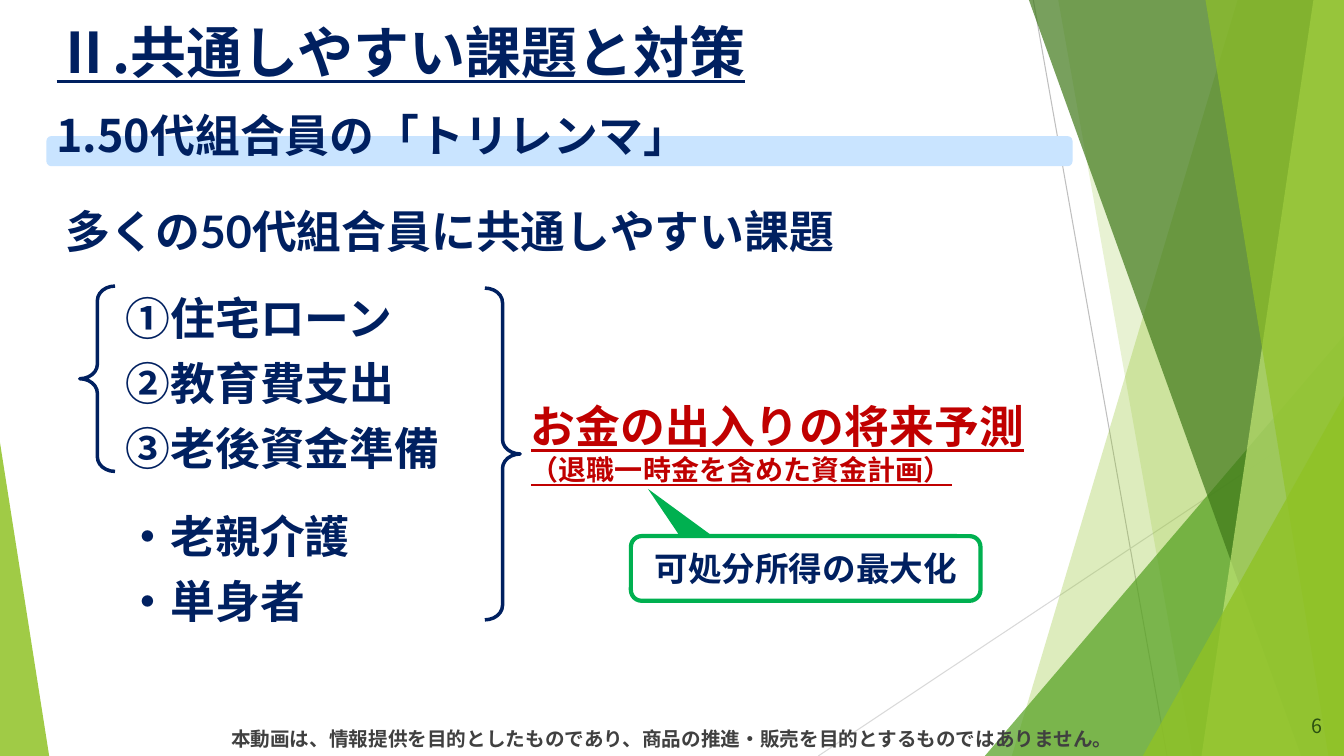
from dataclasses import dataclass
from typing import Union

from lxml.etree import SubElement
from pptx import Presentation
from pptx.dml.color import RGBColor
from pptx.enum.shapes import MSO_CONNECTOR, MSO_SHAPE
from pptx.enum.text import MSO_ANCHOR, MSO_AUTO_SIZE, PP_ALIGN
from pptx.oxml.ns import qn
from pptx.util import Cm, Pt

COLORS = {
    "navy": "002060", "red": "C00000", "green": "00B050", "white": "FFFFFF",
    "sky": "C9E4FF", "grey": "404040", "number": "2A5010", "line": "BFBFBF",
    "pale_line": "D9D9D9", "lime": "90C226", "leaf": "54A021",
    "forest": "3F7819", "light_lime": "C0E474",
}
WIDTH, HEIGHT = 33.87, 19.05
JAPANESE = "Noto Sans CJK JP"


@dataclass
class Band:
    """Decoration reaching from a slanted left edge to the right page edge."""
    top_x: float
    bottom_x: float
    color: str
    opacity: int


@dataclass
class Corner:
    """Right-angled triangle standing on the bottom page edge."""
    left: float
    top: float
    width: float
    adjust: float
    color: str
    opacity: int


@dataclass
class Style:
    size: int
    color: str = "navy"
    font: str = JAPANESE
    bold: bool = True
    underline: bool = False
    align: PP_ALIGN = PP_ALIGN.LEFT


@dataclass
class Label:
    lines: list[str]
    left: float
    top: float
    width: float
    height: float
    styles: list[Style]
    anchor: MSO_ANCHOR = MSO_ANCHOR.TOP
    fit: bool = True


DECORATION: list[Union[Band, Corner]] = [
    Band(31.19, 25.5, "lime", 30),
    Band(26.67, 30.05, "lime", 20),
    Corner(24.82, 8.46, 9.05, 1, "leaf", 72),
    Band(25.93, 32.79, "forest", 70),
    Band(33.1, 30.28, "light_lime", 70),
    Band(30.38, 33.48, "lime", 65),
    Corner(28.8, 9.98, 5.07, 1, "lime", 80),
    Corner(0, 11.15, 1.24, 0, "lime", 85),
]
LEAD = Style(32, font="Lato")
ITEM_STEP = 1.63
ITEM_GROUPS = [
    (7.21, ["①住宅ローン", "②教育費支出", "③老後資金準備"]),
    (12.7, ["・老親介護", "・単身者"]),
]
FOOTER = Label(
    ["本動画は、情報提供を目的としたものであり、商品の推進・販売を目的とするものではありません。"],
    4.14, 18.19, 25.6, 0.86, [Style(14, "grey", "Arial", align=PP_ALIGN.CENTER)])
TITLE = Label(["Ⅱ.共通しやすい課題と対策"], 1.17, 0.38, 31.57, 1.88,
              [Style(40, underline=True)], MSO_ANCHOR.BOTTOM, False)
SUBTITLE = Label(["1.50代組合員の「トリレンマ」"], 1.17, 2.57, 25.86, 1.63,
                 [Style(32)], MSO_ANCHOR.BOTTOM, False)
LABELS = [
    Label(["6"], 31.67, 17.78, 1.9, 1.02,
          [Style(14, "number", bold=False, align=PP_ALIGN.RIGHT)],
          MSO_ANCHOR.MIDDLE, False),
    Label(["多くの50代組合員に共通しやすい課題"], 1.4, 5, 20.96, 1.63, [LEAD]),
    *(Label([item], 2.92, top + index * ITEM_STEP, 9.32, 1.63, [LEAD])
      for top, items in ITEM_GROUPS for index, item in enumerate(items)),
    Label(["お金の出入りの将来予測", "（退職一時金を含めた資金計画）"],
          13.13, 9.93, 15.65, 2.49,
          [Style(size, "red", "Lato", underline=True) for size in (32, 20)]),
]
CALLOUT = Label(["可処分所得の最大化"], 15.9, 13.51, 8.81, 1.63,
                [Style(24, align=PP_ALIGN.CENTER)], MSO_ANCHOR.MIDDLE, False)


def rgb(color: str) -> RGBColor:
    return RGBColor.from_string(COLORS[color])


def paint(shape, fill: str = "", line: str = "", width: float = 0,
          opacity: int = 100) -> None:
    shape.shadow.inherit = False
    if fill:
        shape.fill.solid()
        shape.fill.fore_color.rgb = rgb(fill)
        if opacity < 100:
            color = next(shape.element.spPr.iter(qn("a:srgbClr")))
            SubElement(color, qn("a:alpha"), val=str(opacity * 1000))
    else:
        shape.fill.background()
    if line:
        shape.line.color.rgb = rgb(line)
        shape.line.width = Pt(width)
    else:
        shape.line.fill.background()


def add_preset(page, kind: MSO_SHAPE, left: float, top: float,
               width: float, height: float):
    return page.shapes.add_shape(kind, Cm(left), Cm(top), Cm(width), Cm(height))


def add_outline(page, points: list[tuple[float, float]]):
    corners = [(Cm(x), Cm(y)) for x, y in points]
    builder = page.shapes.build_freeform(*corners[0], scale=1.0)
    builder.add_line_segments(corners[1:], close=True)
    return builder.convert_to_shape()


def add_decoration(page, part: Union[Band, Corner]) -> None:
    if isinstance(part, Band):
        shape = add_outline(page, [(part.top_x, 0), (WIDTH, 0),
                                   (WIDTH, HEIGHT), (part.bottom_x, HEIGHT)])
    else:
        shape = add_preset(page, MSO_SHAPE.ISOSCELES_TRIANGLE, part.left,
                           part.top, part.width, HEIGHT - part.top)
        shape.adjustments[0] = part.adjust
    paint(shape, part.color, opacity=part.opacity)


def add_thin_line(page, start: tuple[float, float], end: tuple[float, float],
                  color: str) -> None:
    line = page.shapes.add_connector(
        MSO_CONNECTOR.STRAIGHT, *(Cm(value) for value in start + end))
    line.line.color.rgb = rgb(color)
    line.line.width = Pt(0.75)
    SubElement(line.element.spPr, qn("a:effectLst"))


def write(box, label: Label) -> None:
    frame = box.text_frame
    frame.text = "\n".join(label.lines)
    frame.word_wrap = True
    frame.vertical_anchor = label.anchor
    frame.auto_size = (MSO_AUTO_SIZE.SHAPE_TO_FIT_TEXT if label.fit
                       else MSO_AUTO_SIZE.NONE)
    for paragraph, style in zip(frame.paragraphs, label.styles):
        paragraph.alignment = style.align
        for span in paragraph.runs:
            font = span.font
            font.size, font.bold = Pt(style.size), style.bold
            font.underline = style.underline
            font.color.rgb = rgb(style.color)
            font.name = style.font
            SubElement(font._element, qn("a:ea"), typeface=JAPANESE)


def add_label(page, label: Label) -> None:
    box = page.shapes.add_textbox(Cm(label.left), Cm(label.top),
                                  Cm(label.width), Cm(label.height))
    write(box, label)


def fill_placeholder(box, label: Label) -> None:
    box.left, box.top = Cm(label.left), Cm(label.top)
    box.width, box.height = Cm(label.width), Cm(label.height)
    write(box, label)
    box.element.getparent().append(box.element)  # bring to the front


def add_brace(page, kind: MSO_SHAPE, left: float, top: float,
              height: float) -> None:
    brace = add_preset(page, kind, left, top, 0.89, height)
    brace.adjustments[0] = 0.41
    paint(brace, line="navy", width=2.5)


def main() -> None:
    deck = Presentation()
    deck.slide_width, deck.slide_height = Cm(WIDTH), Cm(HEIGHT)
    page = deck.slides.add_slide(deck.slide_layouts[1])
    title, body = page.shapes.title, page.placeholders[1]

    # Background decoration
    add_thin_line(page, (26.04, 0), (29.41, HEIGHT), "line")
    add_thin_line(page, (WIDTH, 10.24), (20.62, HEIGHT), "pale_line")
    for part in DECORATION:
        add_decoration(page, part)
    add_label(page, FOOTER)

    # Headings over the highlight bar
    bar = add_preset(page, MSO_SHAPE.ROUNDED_RECTANGLE, 1.17, 3.43, 25.86, 0.76)
    paint(bar, "sky")
    fill_placeholder(title, TITLE)
    fill_placeholder(body, SUBTITLE)
    heading = body.text_frame.paragraphs[0]
    heading.space_before = Pt(10)
    properties = heading._p.get_or_add_pPr()
    properties.set("marL", "0")
    properties.set("indent", "0")
    SubElement(properties, qn("a:buNone"))

    # Issues, braces and forecast
    for label in LABELS:
        add_label(page, label)
    add_brace(page, MSO_SHAPE.LEFT_BRACE, 2.01, 7.21, 4.67)
    add_brace(page, MSO_SHAPE.RIGHT_BRACE, 12.22, 7.26, 8.36)

    # Callout with its tail
    callout = add_preset(page, MSO_SHAPE.ROUNDED_RECTANGLE, CALLOUT.left,
                         CALLOUT.top, CALLOUT.width, CALLOUT.height)
    paint(callout, "white", "green", 3)
    write(callout, CALLOUT)
    tail = add_outline(page, [(17.12, 13.49), (16.33, 12.32), (17.93, 13.49)])
    paint(tail, "green")

    deck.save("out.pptx")


if __name__ == "__main__":
    main()
